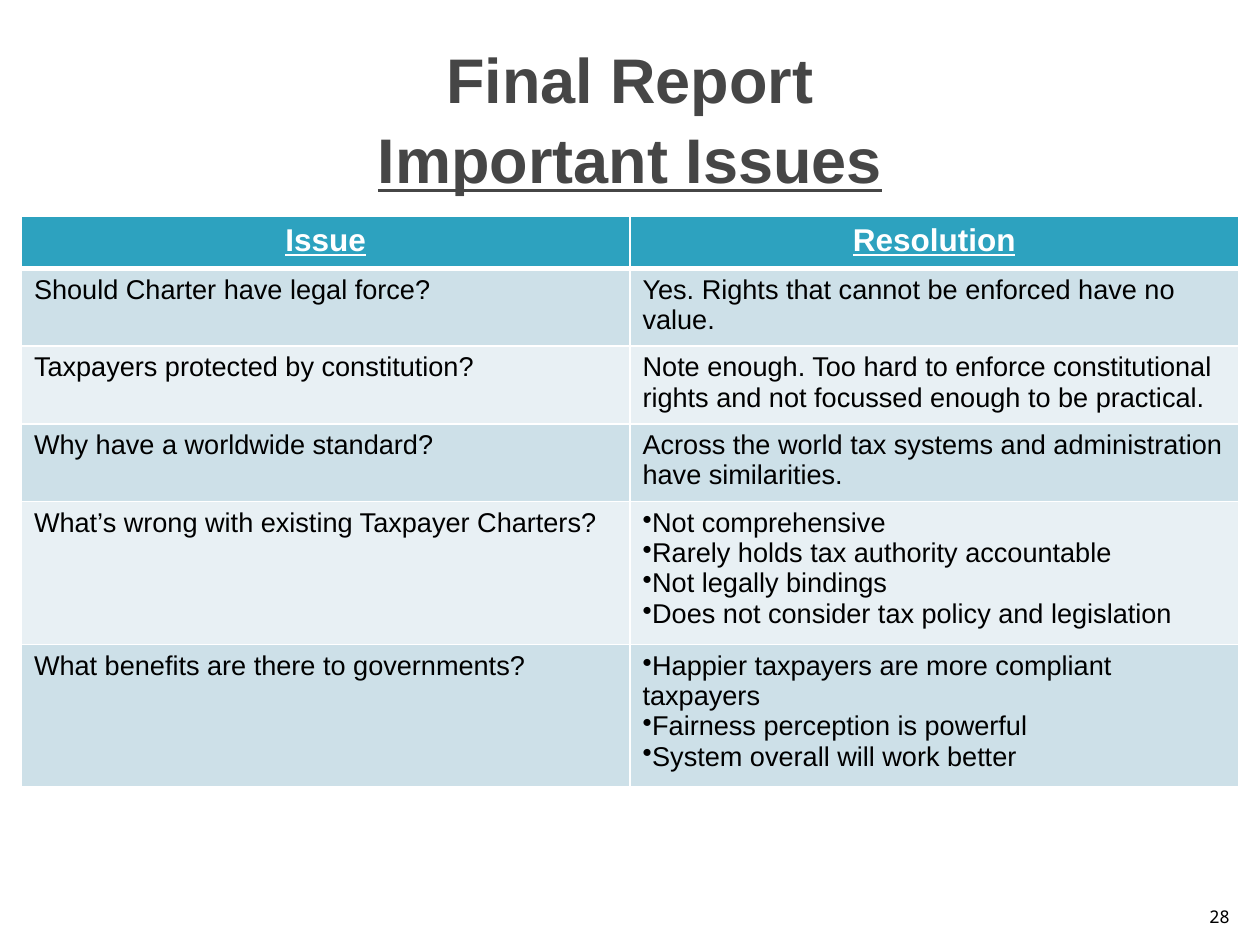
from lxml.etree import SubElement
from pptx import Presentation
from pptx.dml.color import RGBColor
from pptx.enum.text import MSO_ANCHOR, PP_ALIGN
from pptx.oxml.ns import qn
from pptx.util import Inches, Pt

BLACK = RGBColor(0x00, 0x00, 0x00)
WHITE = RGBColor(0xFF, 0xFF, 0xFF)
GREY = RGBColor(0x46, 0x46, 0x46)
TEAL = RGBColor(0x2D, 0xA2, 0xBF)
BANDS = (RGBColor(0xCD, 0xE0, 0xE8), RGBColor(0xE8, 0xF0, 0xF4))

HEADINGS = ("Issue", "Resolution")
ISSUES = (
    ("Should Charter have legal force?",
     ["Yes. Rights that cannot be enforced have no value."]),
    ("Taxpayers protected by constitution?",
     ["Note enough. Too hard to enforce constitutional rights and not "
      "focussed enough to be practical."]),
    ("Why have a worldwide standard?",
     ["Across the world tax systems and administration have similarities."]),
    ("What’s wrong with existing Taxpayer Charters?",
     ["Not comprehensive",
      "Rarely holds tax authority accountable",
      "Not legally bindings",
      "Does not consider tax policy and legislation"]),
    ("What benefits are there to governments?",
     ["Happier taxpayers are more compliant taxpayers",
      "Fairness perception is powerful",
      "System overall will work better"]),
)


def format_runs(paragraph, size, color, bold=False, underline=False, name="Arial"):
    """Give every run of a paragraph the same font."""
    for run in paragraph.runs:
        font = run.font
        font.name, font.size = name, Pt(size)
        font.bold, font.underline = bold, underline
        font.color.rgb = color


def add_text_box(slide, left, top, width, height, text, anchor, alignment):
    """Add a wrapped text box and return its paragraphs."""
    box = slide.shapes.add_textbox(Inches(left), Inches(top), Inches(width), Inches(height))
    text_frame = box.text_frame
    text_frame.word_wrap = True
    text_frame.vertical_anchor = anchor
    text_frame.text = text
    for paragraph in text_frame.paragraphs:
        paragraph.alignment = alignment
    return text_frame.paragraphs


def add_title(slide):
    """Add the two-line title with its second line underlined."""
    paragraph = add_text_box(slide, 0.5, 0.3, 9, 1.25, "Final Report\vImportant Issues",
                             MSO_ANCHOR.MIDDLE, PP_ALIGN.CENTER)[0]
    paragraph.line_spacing = 1.05
    format_runs(paragraph, 36, GREY, bold=True)
    paragraph.runs[-1].font.underline = True


def add_bullet(paragraph):
    """Put a round bullet directly before a paragraph."""
    SubElement(paragraph._p.get_or_add_pPr(), qn("a:buChar"), char="•")


def style_cell(cell, fill, bottom_width=1):
    """Fill a cell and draw its white borders."""
    properties = cell._tc.get_or_add_tcPr()
    for side, width in (("L", 1), ("R", 1), ("T", 1), ("B", bottom_width)):
        line = SubElement(properties, qn(f"a:ln{side}"), w=str(Pt(width)))
        SubElement(SubElement(line, qn("a:solidFill")), qn("a:srgbClr"), val=str(WHITE))
    cell.fill.solid()
    cell.fill.fore_color.rgb = fill


def fill_heading(cell, text):
    """Write a column heading."""
    cell.text_frame.text = text
    paragraph = cell.text_frame.paragraphs[0]
    paragraph.alignment = PP_ALIGN.CENTER
    format_runs(paragraph, 18, WHITE, bold=True, underline=True)
    style_cell(cell, TEAL, bottom_width=3)


def fill_body(cell, lines, fill):
    """Write a body cell, bulleted when it holds several lines."""
    cell.text_frame.text = "\n".join(lines)
    for paragraph in cell.text_frame.paragraphs:
        if len(lines) > 1:
            add_bullet(paragraph)
        format_runs(paragraph, 15.5, BLACK)
    style_cell(cell, fill)


def add_issue_table(slide):
    """Add the table of issues and their resolutions."""
    row_count = len(ISSUES) + 1
    table = slide.shapes.add_table(row_count, len(HEADINGS), Inches(0.17), Inches(1.72),
                                   Inches(9.66), Inches(0.41 * row_count)).table
    for column, heading in enumerate(HEADINGS):
        fill_heading(table.cell(0, column), heading)
    for row, (issue, resolution) in enumerate(ISSUES, start=1):
        fill = BANDS[(row - 1) % len(BANDS)]
        fill_body(table.cell(row, 0), [issue], fill)
        fill_body(table.cell(row, 1), resolution, fill)


def add_slide_number(slide):
    """Add the slide number in the bottom right corner."""
    paragraph = add_text_box(slide, 9.46, 7.01, 0.4, 0.4, "28",
                             MSO_ANCHOR.BOTTOM, PP_ALIGN.RIGHT)[0]
    format_runs(paragraph, 10, BLACK, name="Noto Sans Mono")


def main():
    """Build and save the slide."""
    presentation = Presentation()
    presentation.slide_width, presentation.slide_height = Inches(10), Inches(7.5)
    slide = presentation.slides.add_slide(presentation.slide_layouts[6])
    add_title(slide)
    add_issue_table(slide)
    add_slide_number(slide)
    presentation.save("out.pptx")


if __name__ == "__main__":
    main()
